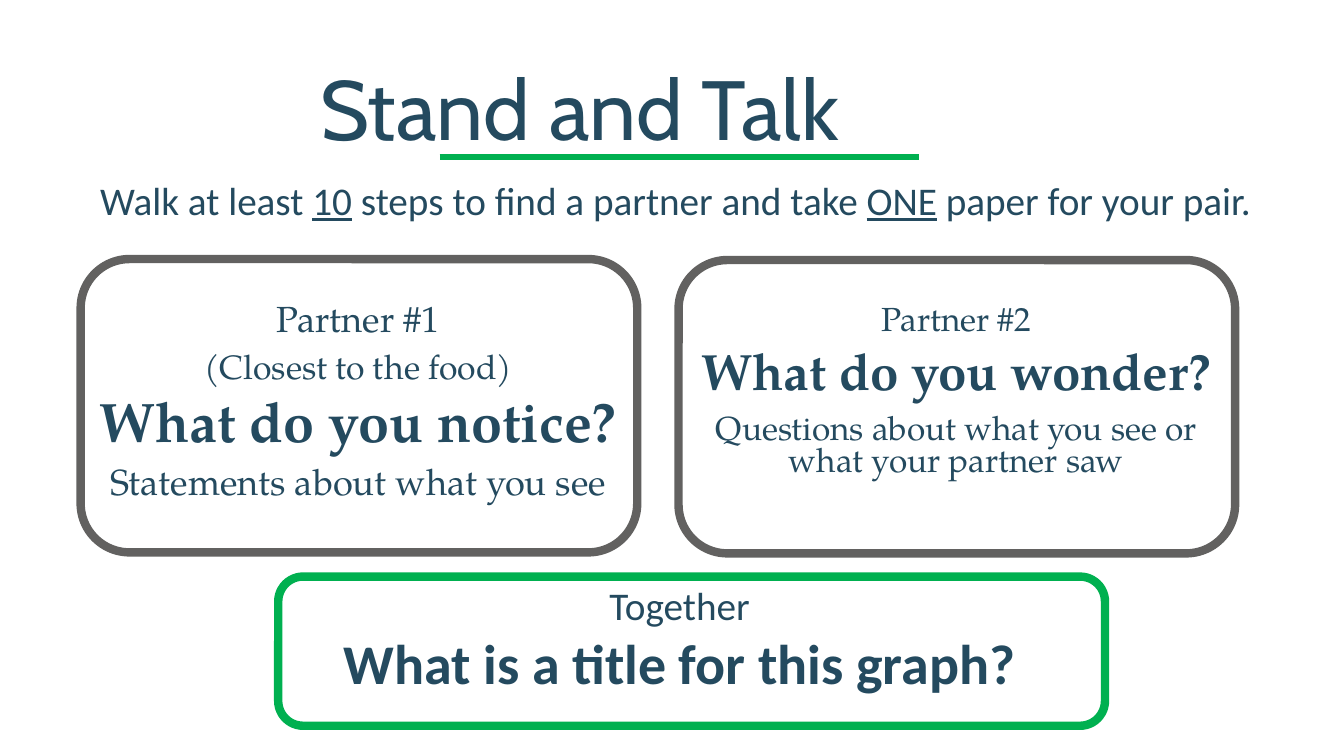
import pptx
import pptx.dml.color
import pptx.enum.shapes
import pptx.enum.text
import pptx.util
from lxml import etree
from pptx.util import Inches

NAVY = pptx.dml.color.RGBColor(0x24, 0x4A, 0x5F)
GRAY = pptx.dml.color.RGBColor(0x62, 0x61, 0x60)
GREEN = pptx.dml.color.RGBColor(0x00, 0xB0, 0x50)
SERIF = "TeX Gyre Pagella"
CENTER = pptx.enum.text.PP_ALIGN.CENTER
DRAWING = "{http://schemas.openxmlformats.org/drawingml/2006/main}"


def place(item, box):
    for name, length in zip(("left", "top", "width", "height"), box):
        setattr(item, name, Inches(length))


def write(frame, paragraphs, para_format):
    frame.word_wrap = True
    frame.auto_size = pptx.enum.text.MSO_AUTO_SIZE.NONE
    for number, spans in enumerate(paragraphs):
        para = frame.paragraphs[0] if number == 0 else frame.add_paragraph()
        for name, value in para_format.items():
            setattr(para, name, value)
        for text, font_format in spans:
            span = para.add_run()
            span.text = text
            span.font.color.rgb = NAVY
            for name, value in font_format.items():
                setattr(span.font, name, value)


def font(name, size, bold=False, underline=False):
    return {"name": name, "size": pptx.util.Pt(size), "bold": bold, "underline": underline}


def add_frame(page, box, color):
    frame = page.shapes.add_shape(
        pptx.enum.shapes.MSO_SHAPE.ROUNDED_RECTANGLE, *map(Inches, box))
    frame.shadow.inherit = False
    frame.fill.background()
    frame.line.color.rgb = color
    frame.line.width = pptx.util.Pt(6)


def add_text(page, box, paragraphs):
    text_box = page.shapes.add_textbox(*map(Inches, box))
    write(text_box.text_frame, paragraphs, {"alignment": CENTER})


def add_heading(page, box):
    left, top, width, height = box
    title = page.shapes.title
    place(title, box)
    title.text_frame.vertical_anchor = pptx.enum.text.MSO_ANCHOR.MIDDLE
    write(title.text_frame, [[("Stand and Talk", font("Cabin", 60))]],
          {"alignment": CENTER, "line_spacing": 0.9})
    rule_left, rule_top = left + 4.36, top + 1.16
    rule = page.shapes.add_connector(
        pptx.enum.shapes.MSO_CONNECTOR.STRAIGHT, Inches(rule_left), Inches(rule_top),
        Inches(rule_left + 4.75), Inches(rule_top))
    rule.line.color.rgb = GREEN
    rule.line.width = pptx.util.Pt(4.5)
    etree.SubElement(rule._element.spPr, DRAWING + "effectLst")


def add_instruction(page, box):
    plain, marked = font("Calibri", 28), font("Calibri", 28, underline=True)
    add_text(page, box, [[
        ("Walk at least ", plain), ("10", marked),
        (" steps to find a partner and take ", plain), ("ONE", marked),
        (" paper for your pair.", plain)]])


def add_partner(page, body, box, lines):
    left, top, width, height = box
    add_frame(page, box, GRAY)
    place(body, (left - 0.08, top + 0.4, width + 0.15, 2.12))
    body.text_frame.vertical_anchor = pptx.enum.text.MSO_ANCHOR.TOP
    write(body.text_frame,
          [[(text, font(SERIF, size, bold))] for text, size, bold in lines],
          {"alignment": CENTER, "line_spacing": 0.8, "space_before": pptx.util.Pt(10)})
    for para in body.text_frame.paragraphs:
        properties = para._p.get_or_add_pPr()
        properties.set("marL", "0")
        properties.set("indent", "0")
        etree.SubElement(properties, DRAWING + "buNone")


def add_together(page, box):
    left, top, width, height = box
    add_frame(page, box, GREEN)
    add_text(page, (left - 0.43, top, width + 0.62, 1.25), [
        [("Together", font("Calibri", 28))],
        [("What is a title for this graph?", font("Calibri", 40, bold=True))]])


def main():
    deck = pptx.Presentation()
    deck.slide_width, deck.slide_height = Inches(13.33), Inches(7.5)
    page = deck.slides.add_slide(deck.slide_layouts.get_by_name("Two Content"))
    add_heading(page, (0, 0.4, 11.5, 1.45))
    add_instruction(page, (0.42, 1.7, 12.56, 0.57))
    add_partner(page, page.placeholders[1], (0.8, 2.57, 5.52, 2.91), [
        ("Partner #1", 25.9, False),
        ("(Closest to the food)", 24.1, False),
        ("What do you notice?", 39.8, True),
        ("Statements about what you see", 25.9, False)])
    add_partner(page, page.placeholders[2], (6.73, 2.58, 5.52, 2.91), [
        ("Partner #2", 23.8, False),
        ("What do you wonder?", 36.5, True),
        ("Questions about what you see or what your partner saw", 23.8, False)])
    add_together(page, (2.76, 5.72, 8.2, 1.48))
    deck.save("out.pptx")


if __name__ == "__main__":
    main()
